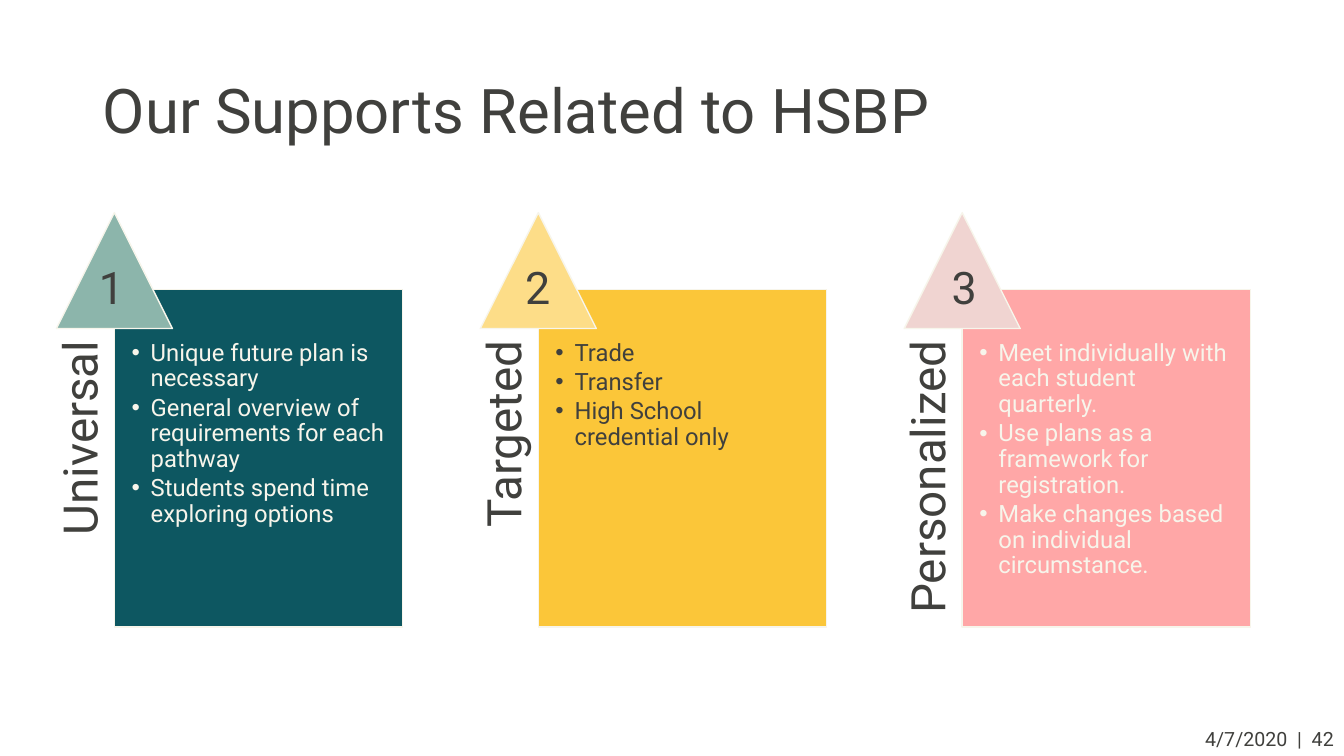
"""Build the slide on the three tiers of HSBP supports."""
from dataclasses import dataclass

from lxml import etree
from pptx import Presentation
from pptx.dml.color import RGBColor
from pptx.enum.shapes import MSO_SHAPE
from pptx.enum.text import MSO_ANCHOR, MSO_AUTO_SIZE, PP_ALIGN
from pptx.oxml.ns import qn
from pptx.util import Emu, Inches, Pt

TRIANGLE = MSO_SHAPE.ISOSCELES_TRIANGLE
TOP, MIDDLE = MSO_ANCHOR.TOP, MSO_ANCHOR.MIDDLE
LEFT, CENTER, RIGHT = PP_ALIGN.LEFT, PP_ALIGN.CENTER, PP_ALIGN.RIGHT
NO_AUTOFIT = MSO_AUTO_SIZE.NONE
SLIDE_WIDTH, SLIDE_HEIGHT = Inches(13.33), Inches(7.5)
COMPARISON_LAYOUT = 4
HANGING_INDENT = Inches(0.19)


@dataclass(frozen=True)
class Theme:
    """Font, colours and type sizes of the slide."""
    font: str = "Roboto"
    dark: str = "40403D"
    cream: str = "F7F5EB"
    title: int = 44
    label: int = 34
    number: int = 32
    bullet: int = 17
    footer: int = 14


@dataclass(frozen=True)
class Frame:
    """A box in percent of the slide's width and height."""
    left: float
    top: float
    width: float
    height: float

    def shifted(self, columns: float) -> "Frame":
        """Return the frame moved right by a percentage of the width."""
        return Frame(self.left + columns, self.top, self.width, self.height)


@dataclass(frozen=True)
class Tier:
    """One numbered panel of supports."""
    name: str
    panel_fill: str
    triangle_fill: str
    text_color: str
    bullets: tuple[str, ...]


THEME = Theme()
TITLE = Frame(6.9, 5.33, 86.27, 19.33)
PANEL = Frame(8.51, 38.27, 21.45, 44.67)
LABEL = Frame(-6.23, 56.8, 25.13, 7.6)
MARKER = Frame(4.2, 28.13, 8.63, 15.33)
NUMBER = Frame(6.6, 33.73, 3.38, 8.53)
FOOTER = Frame(87.17, 95.47, 12.83, 4.53)
TIER_PITCH, NUMBER_PITCH = 31.54, 31.73

TIERS = (
    Tier("Universal", "0D5761", "8CB5AB", THEME.cream, (
        "Unique future plan is necessary",
        "General overview of requirements for each pathway",
        "Students spend time exploring options")),
    Tier("Targeted", "FBC639", "FDDD88", THEME.dark, (
        "Trade", "Transfer", "High School credential only")),
    Tier("Personalized", "FFA7A7", "F0D4D1", THEME.cream, (
        "Meet individually with each student quarterly.",
        "Use plans as a framework for registration.",
        "Make changes based on individual circumstance.")),
)


def place(shape, frame: Frame) -> None:
    """Move and size a shape to its frame."""
    shape.left = Emu(round(SLIDE_WIDTH * frame.left / 100))
    shape.top = Emu(round(SLIDE_HEIGHT * frame.top / 100))
    shape.width = Emu(round(SLIDE_WIDTH * frame.width / 100))
    shape.height = Emu(round(SLIDE_HEIGHT * frame.height / 100))


def paint(shape, fill: str) -> None:
    """Give a shape a solid fill and the thin cream outline."""
    shape.fill.solid()
    shape.fill.fore_color.rgb = RGBColor.from_string(fill)
    shape.line.color.rgb = RGBColor.from_string(THEME.cream)
    shape.line.width = Pt(1)


def set_margins(text_frame, left: float, top: float, right: float, bottom: float) -> None:
    """Set the inner margins of a text frame in inches."""
    text_frame.margin_left, text_frame.margin_top = Inches(left), Inches(top)
    text_frame.margin_right, text_frame.margin_bottom = Inches(right), Inches(bottom)


def style(paragraph, size: int, color: str, align: PP_ALIGN, spacing: float = 1.0) -> None:
    """Set the font, alignment and line spacing of a paragraph."""
    paragraph.alignment = align
    paragraph.line_spacing = spacing
    paragraph.space_before = Pt(0)
    paragraph.font.name = THEME.font
    paragraph.font.size = Pt(size)
    paragraph.font.bold = False
    paragraph.font.color.rgb = RGBColor.from_string(color)


def add_bullet(paragraph) -> None:
    """Give a paragraph a round bullet and a hanging indent."""
    properties = paragraph._p.get_or_add_pPr()
    properties.set("marL", str(HANGING_INDENT))
    properties.set("indent", str(-HANGING_INDENT))
    etree.SubElement(properties, qn("a:buChar")).set("char", "•")


def add_text(page, frame: Frame, text: str, size: int, align: PP_ALIGN, spacing: float = 1.0):
    """Add a one-paragraph text box and return it."""
    box = page.shapes.add_textbox(0, 0, 0, 0)
    place(box, frame)
    box.text_frame.word_wrap = True
    paragraph = box.text_frame.paragraphs[0]
    paragraph.text = text
    style(paragraph, size, THEME.dark, align, spacing)
    return box


def fill_title(page, text: str) -> None:
    """Place and format the slide title."""
    title = page.shapes.title
    place(title, TITLE)
    title.text_frame.auto_size = NO_AUTOFIT
    title.text_frame.vertical_anchor = MIDDLE
    title.text_frame.text = text
    style(title.text_frame.paragraphs[0], THEME.title, THEME.dark, LEFT, 0.9)


def fill_panel(panel, tier: Tier, frame: Frame) -> None:
    """Turn a body placeholder into a coloured bullet panel."""
    place(panel, frame)
    paint(panel, tier.panel_fill)
    text_frame = panel.text_frame
    text_frame.auto_size = NO_AUTOFIT
    text_frame.vertical_anchor = TOP
    set_margins(text_frame, 0.17, 0.51, 0.17, 0.17)
    text_frame.text = "\n".join(tier.bullets)
    for paragraph in text_frame.paragraphs:
        add_bullet(paragraph)
        style(paragraph, THEME.bullet, tier.text_color, LEFT, 0.9)
        paragraph.space_after = Pt(2.5)


def add_tier(page, panel, tier: Tier, index: int) -> None:
    """Draw one tier: panel, upright label and numbered triangle."""
    shift = index * TIER_PITCH
    fill_panel(panel, tier, PANEL.shifted(shift))
    label = add_text(page, LABEL.shifted(shift), tier.name, THEME.label, RIGHT, 0.9)
    label.rotation = 270
    set_margins(label.text_frame, 0, 0, 0.51, 0)
    marker = page.shapes.add_shape(TRIANGLE, 0, 0, 0, 0)
    marker.shadow.inherit = False
    place(marker, MARKER.shifted(shift))
    paint(marker, tier.triangle_fill)
    add_text(page, NUMBER.shifted(index * NUMBER_PITCH), str(index + 1), THEME.number, CENTER)


def main() -> None:
    """Build and save the deck."""
    deck = Presentation()
    deck.slide_width, deck.slide_height = SLIDE_WIDTH, SLIDE_HEIGHT
    page = deck.slides.add_slide(deck.slide_layouts[COMPARISON_LAYOUT])
    fill_title(page, "Our Supports Related to HSBP")
    *panels, spare = list(page.placeholders)[1:]
    spare.element.getparent().remove(spare.element)
    for index, (panel, tier) in enumerate(zip(panels, TIERS)):
        add_tier(page, panel, tier, index)
    add_text(page, FOOTER, "4/7/2020\u00a0 |\u00a0 42".replace("\u00a0", " "), THEME.footer, RIGHT)
    deck.save("out.pptx")


if __name__ == "__main__":
    main()
